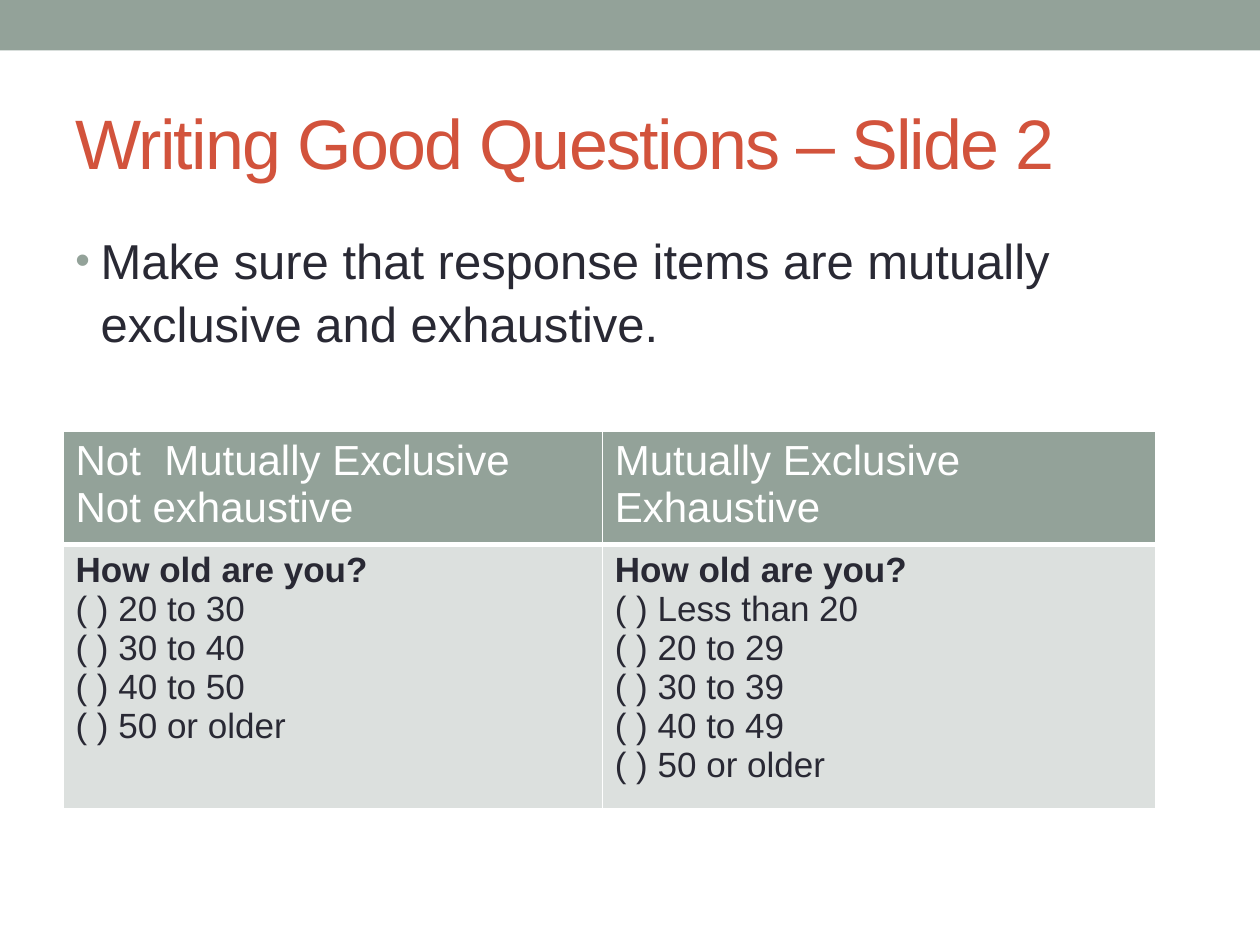
"""Build a slide on mutually exclusive and exhaustive response items."""
from dataclasses import dataclass

from lxml.etree import SubElement as Sub
from pptx import Presentation
from pptx.dml.color import RGBColor as RGB
from pptx.enum.shapes import MSO_SHAPE as Shape
from pptx.enum.text import MSO_ANCHOR as Anchor, PP_ALIGN as Align
from pptx.oxml.ns import qn
from pptx.util import Inches, Pt


@dataclass
class Theme:
    font: str = "Arial"
    sage: str = "93A299"
    pale: str = "DCE0DE"
    rust: str = "D2533C"
    ink: str = "292934"
    white: str = "FFFFFF"
    title: int = 40
    body: int = 28
    head: int = 24
    cell: int = 20


def write(par, text, size, color, bold=False):
    run = par.add_run()
    run.text = text
    font = run.font
    font.name, font.size, font.bold = theme.font, Pt(size), bold
    font.color.rgb = RGB.from_string(color)
    return run


def edge(cell, sides):
    props = cell._tc.get_or_add_tcPr()
    for spot, (side, width) in enumerate(sides.items()):
        line = Sub(props, qn(f"a:ln{side}"), w=str(Pt(width)))
        fill = Sub(line, qn("a:solidFill"))
        Sub(fill, qn("a:srgbClr"), val=theme.white)
        props.remove(line)
        props.insert(spot, line)


theme = Theme()
deck = Presentation()
deck.slide_width, deck.slide_height = Inches(10), Inches(7.5)
slide = deck.slides.add_slide(deck.slide_layouts[5])
shapes = slide.shapes

band = shapes.add_shape(Shape.RECTANGLE, 0, 0, Inches(10), Inches(0.4))
band.shadow.inherit = False
band.fill.solid()
band.fill.fore_color.rgb = RGB.from_string(theme.sage)
band.line.fill.background()

title = shapes.title
title.left, title.top = Inches(0.5), Inches(0.58)
title.width, title.height = Inches(9), Inches(1.08)
title.text_frame.vertical_anchor = Anchor.MIDDLE
par = title.text_frame.paragraphs[0]
par.alignment = Align.LEFT
run = write(par, "Writing Good Questions – Slide 2", theme.title, theme.rust)
run.font._element.set("spc", "-100")

body = shapes.add_textbox(Inches(0.5), Inches(1.75), Inches(9), Inches(5.33))
body.text_frame.word_wrap = True
par = body.text_frame.paragraphs[0]
par.line_spacing = 1.07
write(par, "Make sure that response items are mutually exclusive and exhaustive.",
      theme.body, theme.ink)
props = par._p.get_or_add_pPr()
props.set("marL", str(Inches(0.2)))
props.set("indent", str(Inches(-0.2)))
Sub(Sub(props, qn("a:buClr")), qn("a:srgbClr"), val=theme.sage)
Sub(props, qn("a:buSzPct"), val="85000")
Sub(props, qn("a:buFont"), typeface=theme.font)
Sub(props, qn("a:buChar"), char="•")

rows = [
    [["Not  Mutually Exclusive", "Not exhaustive"],
     ["Mutually Exclusive", "Exhaustive"]],
    [["How old are you?", "( ) 20 to 30", "( ) 30 to 40", "( ) 40 to 50",
      "( ) 50 or older"],
     ["How old are you?", "( ) Less than 20", "( ) 20 to 29", "( ) 30 to 39",
      "( ) 40 to 49", "( ) 50 or older"]],
]
styles = [
    (theme.sage, theme.head, theme.white, {"L": 1, "R": 1, "T": 1, "B": 3}),
    (theme.pale, theme.cell, theme.ink, {"L": 1, "R": 1, "T": 1, "B": 1}),
]
grid = shapes.add_table(2, 2, Inches(0.5), Inches(3.42),
                        Inches(8.67), Inches(2.79)).table
for col, width in zip(grid.columns, (4.28, 4.39)):
    col.width = Inches(width)
for row, height in zip(grid.rows, (0.84, 1.95)):
    row.height = Inches(height)
for r, (fill, size, color, sides) in enumerate(styles):
    for c, lines in enumerate(rows[r]):
        cell = grid.cell(r, c)
        cell.fill.solid()
        cell.fill.fore_color.rgb = RGB.from_string(fill)
        edge(cell, sides)
        frame = cell.text_frame
        for n, text in enumerate(lines):
            par = frame.add_paragraph() if n else frame.paragraphs[0]
            write(par, text, size, color, bold=r == 1 and n == 0)

deck.save("out.pptx")
